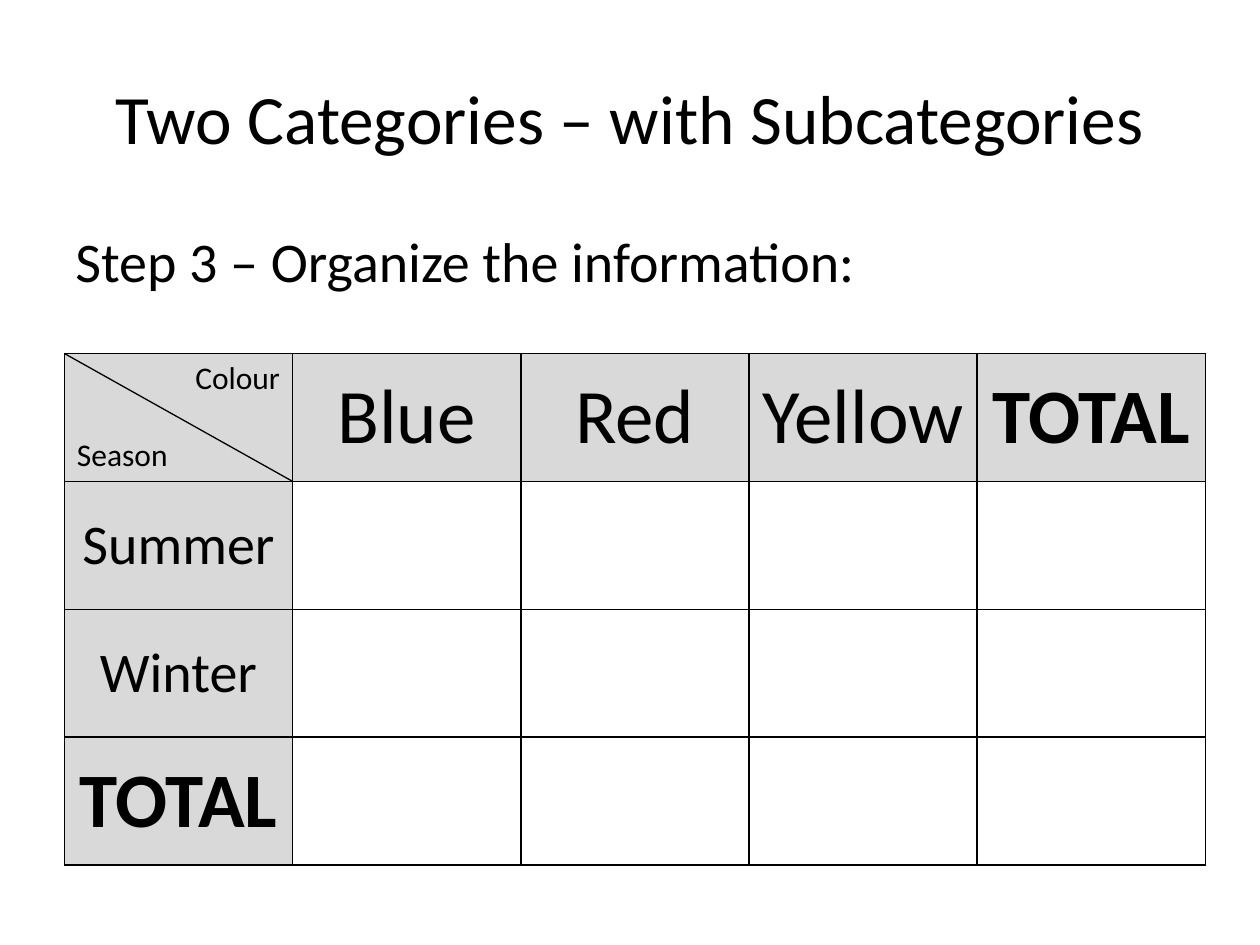
import pptx
import pptx.dml.color
import pptx.enum.shapes
import pptx.enum.text
import pptx.oxml
import pptx.oxml.ns
import pptx.util

Pt = pptx.util.Pt
ALIGN = pptx.enum.text.PP_ALIGN
ANCHOR = pptx.enum.text.MSO_ANCHOR
COLORS = {"text": "000000", "line": "000000", "header": "D9D9D9"}


def rgb(name):
    return pptx.dml.color.RGBColor.from_string(COLORS[name])


class SlideBuilder:
    font = "Calibri"
    border = 1

    def __init__(self, s):
        self.s = s

    def add_text(self, p, text, size, bold=False, **formats):
        r = p.add_run()
        r.text = text
        for key, value in {"name": self.font, "size": Pt(size), "bold": bold}.items():
            setattr(r.font, key, value)
        r.font.color.rgb = rgb("text")
        for key, value in formats.items():
            setattr(p, key, value)

    def title(self, text, box, size):
        sp = self.s.shapes.title
        for key, value in zip(("left", "top", "width", "height"), box):
            setattr(sp, key, Pt(value))
        tf = sp.text_frame
        tf.vertical_anchor = ANCHOR.MIDDLE
        self.add_text(tf.paragraphs[0], text, size, alignment=ALIGN.CENTER)

    def text(self, text, box, size):
        tf = self.s.shapes.add_textbox(*map(Pt, box)).text_frame
        tf.word_wrap = True
        self.add_text(tf.paragraphs[0], text, size)

    def borders(self, cell):
        tc_pr = cell._tc.get_or_add_tcPr()
        for i, side in enumerate("LRTB"):
            tc_pr.insert(i, pptx.oxml.parse_xml(
                f'<a:ln{side} {pptx.oxml.ns.nsdecls("a")} w="{Pt(self.border)}"><a:solidFill>'
                f'<a:srgbClr val="{COLORS["line"]}"/></a:solidFill></a:ln{side}>'))

    def table(self, left, top, col_width, row_height, columns, rows):
        """Draw a grid whose first row and column are shaded headings."""
        n_rows, n_cols = len(rows) + 1, len(columns) + 1
        table = self.s.shapes.add_table(
            n_rows, n_cols, Pt(left), Pt(top),
            Pt(col_width * n_cols), Pt(row_height * n_rows)).table
        for col in table.columns:
            col.width = Pt(col_width)
        for row in table.rows:
            row.height = Pt(row_height)
        for cell in table.iter_cells():
            cell.fill.background()
        headings = {(0, c): h for c, h in enumerate(columns, 1)}
        headings.update({(r, 0): h for r, h in enumerate(rows, 1)})
        for (r, c), heading in headings.items():
            cell = table.cell(r, c)
            cell.vertical_anchor = ANCHOR.MIDDLE
            self.add_text(cell.text_frame.paragraphs[0], *heading, alignment=ALIGN.CENTER)
        for r, c in [(0, 0), *headings]:
            cell = table.cell(r, c)
            cell.fill.solid()
            cell.fill.fore_color.rgb = rgb("header")
        for cell in table.iter_cells():
            self.borders(cell)
        return table

    def corner(self, cell, upper, lower, size, gap):
        tf = cell.text_frame
        self.add_text(tf.paragraphs[0], upper, size, alignment=ALIGN.RIGHT)
        self.add_text(tf.add_paragraph(), lower, size,
                      alignment=ALIGN.LEFT, space_before=Pt(gap))

    def line(self, x1, y1, x2, y2, width):
        sp = self.s.shapes.add_connector(
            pptx.enum.shapes.MSO_CONNECTOR.STRAIGHT, *map(Pt, (x1, y1, x2, y2)))
        sp.line.color.rgb = rgb("line")
        sp.line.width = Pt(width)
        sp._element.spPr.append(
            pptx.oxml.parse_xml(f'<a:effectLst {pptx.oxml.ns.nsdecls("a")}/>'))


def main():
    prs = pptx.Presentation()
    prs.slide_width, prs.slide_height = Pt(720), Pt(540)
    b = SlideBuilder(prs.slides.add_slide(prs.slide_layouts[5]))

    # Title and step
    b.title("Two Categories – with Subcategories", (36, 21.6, 648, 90), 39.6)
    b.text("Step 3 – Organize the information:", (36, 126, 648, 48), 32)

    # Two-way table
    left, top, col_width, row_height = 36.8, 202, 130.4, 73.1
    total = ("TOTAL", 44, True)
    columns = [(name, 44) for name in ("Blue", "Red", "Yellow")] + [total]
    rows = [(name, 32) for name in ("Summer", "Winter")] + [total]
    table = b.table(left, top, col_width, row_height, columns, rows)

    # Split corner cell
    b.corner(table.cell(0, 0), "Colour", "Season", 18, 21.9)
    b.line(left + col_width, top + row_height, left, top, 0.75)

    prs.save("out.pptx")


if __name__ == "__main__":
    main()
